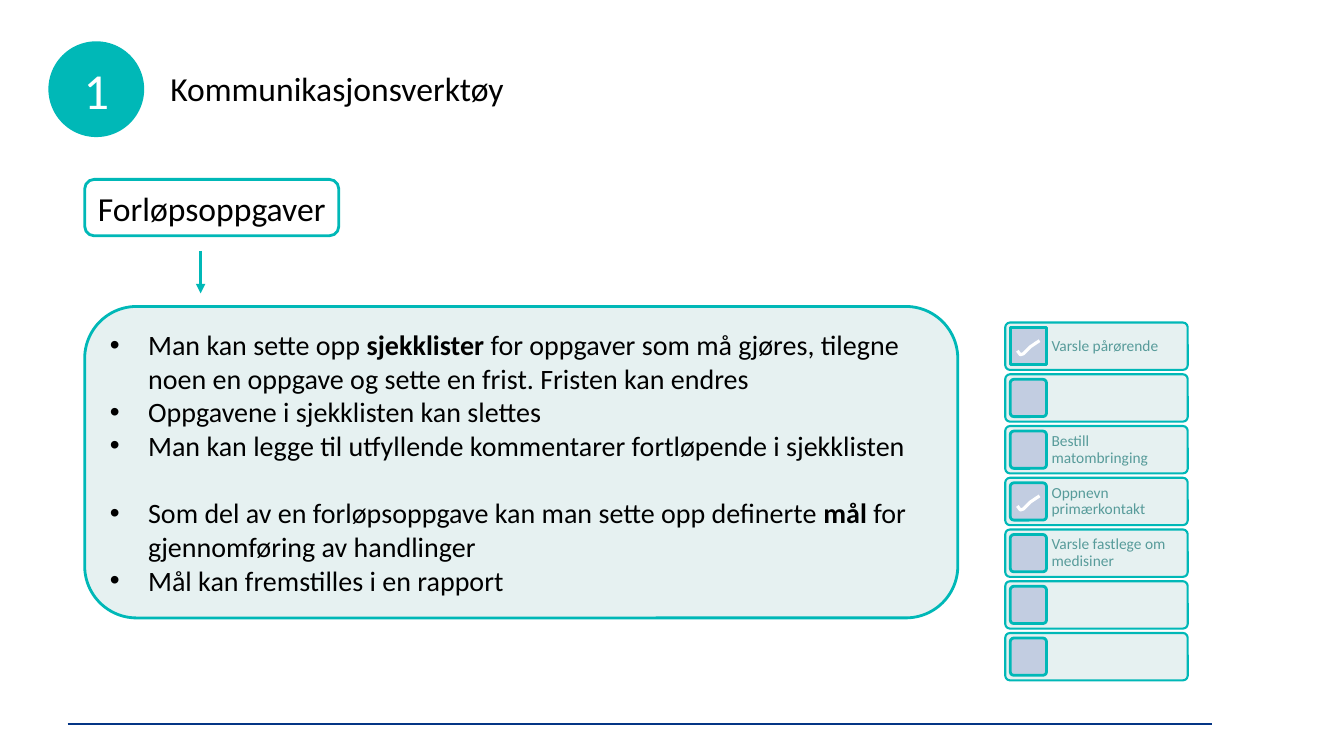
"""Builds the slide about care pathway tasks as a communication tool."""
from lxml import etree
from pptx import Presentation
from pptx.dml.color import RGBColor
from pptx.enum.shapes import MSO_CONNECTOR, MSO_SHAPE as SHAPE
from pptx.enum.text import MSO_ANCHOR as ANCHOR, PP_ALIGN as ALIGN
from pptx.oxml.ns import qn
from pptx.util import Inches, Pt

COLORS = {
    "teal": "00B8B7", "mint": "E6F1F1", "checkbox": "C2CDE1", "label": "579B9A",
    "navy": "043585", "black": "000000", "white": "FFFFFF",
}


def add_box(shapes, kind, place, fill=None, line_width=None):
    """Adds a preset shape, or a text box when kind is None."""
    place = [Inches(length) for length in place]
    if kind is None:
        box = shapes.add_textbox(*place)
    else:
        box = shapes.add_shape(kind, *place)
        box.shadow.inherit = False
        box.fill.solid()
        box.fill.fore_color.rgb = RGBColor.from_string(COLORS[fill])
        if line_width:
            box.line.color.rgb = RGBColor.from_string(COLORS["teal"])
            box.line.width = Pt(line_width)
        else:
            box.line.fill.background()
    box.text_frame.word_wrap = True
    return box


def style(paragraph, size, color, align=ALIGN.LEFT):
    """Sets alignment and font of a paragraph."""
    paragraph.alignment = align
    paragraph.font.name = "Calibri"
    paragraph.font.size = Pt(size)
    paragraph.font.color.rgb = RGBColor.from_string(COLORS[color])


prs = Presentation()
prs.slide_width, prs.slide_height = Inches(13.33), Inches(7.5)
slide = prs.slides.add_slide(prs.slide_layouts[6])

lines = [
    (0.67, 7.18, 12.02, 7.18, "navy", 1.25, False),
    (1.99, 2.49, 1.99, 2.91, "teal", 2.25, True),
]
for x1, y1, x2, y2, color, width, has_arrow in lines:
    line = slide.shapes.add_connector(
        MSO_CONNECTOR.STRAIGHT, Inches(x1), Inches(y1), Inches(x2), Inches(y2))
    line.line.color.rgb = RGBColor.from_string(COLORS[color])
    line.line.width = Pt(width)
    if has_arrow:
        etree.SubElement(line.line._get_or_add_ln(), qn("a:tailEnd"), type="triangle")
    etree.SubElement(line._element.spPr, qn("a:effectLst"))

topic = add_box(slide.shapes, SHAPE.ROUNDED_RECTANGLE, (0.84, 1.78, 2.52, 0.56), "white", 2)
topic.text_frame.word_wrap = False
topic.text_frame.text = "Forløpsoppgaver"
style(topic.text_frame.paragraphs[0], 24, "black", ALIGN.CENTER)

points = [
    (["Man kan sette opp ", "sjekklister",
      " for oppgaver som må gjøres, tilegne noen en oppgave og sette en frist. "
      "Fristen kan endres"], 0),
    (["Oppgavene i sjekklisten kan slettes"], 0),
    (["Man kan legge til utfyllende kommentarer fortløpende i sjekklisten"], 0),
    (["Som del av en forløpsoppgave kan man sette opp definerte ", "mål",
      " for gjennomføring av handlinger"], 24),
    (["Mål kan fremstilles i en rapport"], 0),
]
details = add_box(slide.shapes, SHAPE.ROUNDED_RECTANGLE, (0.84, 3.04, 8.66, 3.09), "mint", 2)
details.text_frame.vertical_anchor = ANCHOR.MIDDLE
for index, (parts, gap) in enumerate(points):
    point = details.text_frame.add_paragraph() if index else details.text_frame.paragraphs[0]
    properties = point._p.get_or_add_pPr()
    properties.set("marL", str(Inches(0.38)))
    properties.set("indent", str(-Inches(0.38)))
    etree.SubElement(properties, qn("a:buFont"), typeface="Arial")
    etree.SubElement(properties, qn("a:buChar"), char="•")
    if gap:
        point.space_before = Pt(gap)
    style(point, 20, "black")
    for position, part in enumerate(parts):
        run = point.add_run()
        run.text = part
        if position == 1:
            run.font.bold = True

title = add_box(slide.shapes, None, (1.59, 0.62, 3.62, 0.55))
title.text_frame.text = "Kommunikasjonsverktøy"
style(title.text_frame.paragraphs[0], 24, "black")

badge = slide.shapes.add_group_shape().shapes
add_box(badge, SHAPE.OVAL, (0.48, 0.41, 0.95, 0.95), "teal")
number = add_box(badge, None, (0.46, 0.54, 0.99, 0.71))
number.text_frame.text = "1"
style(number.text_frame.paragraphs[0], 36, "white", ALIGN.CENTER)

tasks = [
    ("Varsle pårørende", True), ("", False), ("Bestill matombringing", False),
    ("Oppnevn primærkontakt", True), ("Varsle fastlege om medisiner", False),
    ("", False), ("", False),
]
tick_points = [(0, 10), (3, 14), (6, 13), (10, 9), (13, 6), (16, 4), (19, 2), (22, 0)]
checklist_top, row_pitch = 3.2, 3.08 / 6
checklist = slide.shapes.add_group_shape().shapes
for row, (task, done) in enumerate(tasks):
    top = checklist_top + row * row_pitch
    bar = add_box(checklist, SHAPE.ROUNDED_RECTANGLE, (9.97, top, 1.81, 0.47), "mint", 1.5)
    bar.adjustments[0] = 0.1
    if task:
        label = add_box(checklist, None, (10.38, top, 1.4, 0.47))
        frame = label.text_frame
        frame.margin_left = frame.margin_right = Inches(0.05)
        frame.margin_top = frame.margin_bottom = Inches(0.05)
        frame.vertical_anchor = ANCHOR.MIDDLE
        frame.text = task
        frame.paragraphs[0].line_spacing = 0.9
        style(frame.paragraphs[0], 11, "label")
    corner = SHAPE.ROUNDED_RECTANGLE if row else SHAPE.RECTANGLE
    checkbox = add_box(checklist, corner, (10.02, top + 0.05, 0.36, 0.37), "checkbox", 2)
    if row:
        checkbox.adjustments[0] = 0.1
    if done:
        builder = checklist.build_freeform(*tick_points[0], scale=Inches(0.01))
        builder.add_line_segments(tick_points[1:], close=False)
        tick = builder.convert_to_shape(Inches(10.09), Inches(top + 0.18))
        tick.shadow.inherit = False
        tick.fill.background()
        tick.line.color.rgb = RGBColor.from_string(COLORS["white"])
        tick.line.width = Pt(2.25)

prs.save("out.pptx")
